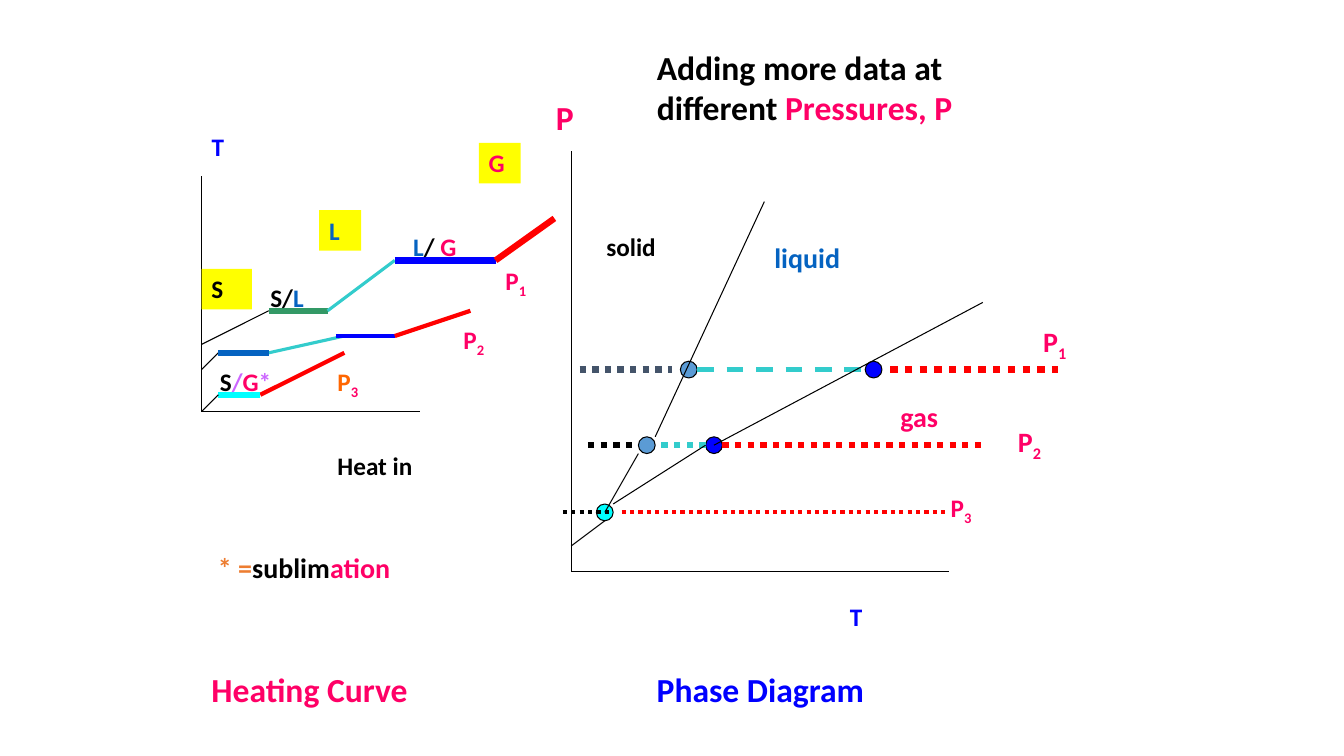
from lxml import etree
from pptx import Presentation
from pptx import util as u
from pptx.dml.color import RGBColor
from pptx.enum import dml, shapes, text
from pptx.oxml.ns import qn

COLORS = {
    "black": "000000", "blue": "0000FF", "red": "FF0000", "pink": "FF0066",
    "yellow": "FFFF00", "cyan": "00FFFF", "teal": "33CCCC", "green": "339966",
    "liquid": "0563C1", "melt": "5B9BD5", "slate": "44546A",
    "violet": "CC66FF", "orange": "FF6600", "amber": "ED7D31",
}
RGB = {name: RGBColor.from_string(value) for name, value in COLORS.items()}
DOT = dml.MSO_LINE.ROUND_DOT
DASH = dml.MSO_LINE.DASH
LINE_HEIGHT = {18: 29, 20: 31, 24: 36}

prs = Presentation()
prs.slide_width, prs.slide_height = u.Pt(960), u.Pt(540)
slide = prs.slides.add_slide(prs.slide_layouts[5])


def draw_line(x1, y1, x2, y2, color="black", width=0.75, dash=None):
    line = slide.shapes.add_connector(
        shapes.MSO_CONNECTOR.STRAIGHT, *map(u.Pt, (x1, y1, x2, y2)))
    line.line.color.rgb = RGB[color]
    line.line.width = u.Pt(width)
    if dash:
        line.line.dash_style = dash
    etree.SubElement(line._element.spPr, qn("a:effectLst"))


def write(box, size, runs):
    frame = box.text_frame
    layout = {"word_wrap": True, "auto_size": text.MSO_AUTO_SIZE.NONE,
              "vertical_anchor": text.MSO_ANCHOR.TOP,
              "margin_left": u.Pt(7.2), "margin_right": u.Pt(7.2),
              "margin_top": u.Pt(3.6), "margin_bottom": u.Pt(3.6)}
    for key, value in layout.items():
        setattr(frame, key, value)
    paragraph = frame.paragraphs[0]
    paragraph.alignment = text.PP_ALIGN.LEFT
    for words, color in runs:
        run = paragraph.add_run()
        run.text = words
        for key, value in {"name": "Calibri", "size": u.Pt(size), "bold": True}.items():
            setattr(run.font, key, value)
        run.font.color.rgb = RGB[color]
        if words.isdigit():  # pressure index as subscript
            run._r.get_or_add_rPr().set("baseline", "-25000")


# Title
title = slide.shapes.title
for key, value in {"left": 462, "top": 30, "width": 306, "height": 66}.items():
    setattr(title, key, u.Pt(value))
write(title, 24, [("Adding more data at different ", "black"), ("Pressures, P", "pink")])

# Axes of both diagrams: origin x, origin y, top, right end
for x, y, top, right in [(408, 408, 108, 678), (144, 294, 126, 300)]:
    draw_line(x, top, x, y)
    draw_line(x, y, right, y)

# Heating curves
heating_segments = [
    # P1
    (192, 222, 144, 246),
    (192, 222, 234, 222, "green", 4.5),
    (234, 222, 282, 186, "teal", 2.25),
    (282, 186, 354, 186, "blue", 4.5),
    (354, 186, 396, 156, "red", 4.5),
    # P2
    (156, 252, 144, 264),
    (192, 252, 246, 240, "teal", 2.25),
    (240, 240, 282, 240, "blue", 3),
    (282, 240, 336, 222, "red", 3),
    (192, 252, 156, 252, "liquid", 4.5),
    # P3
    (246, 252, 186, 282, "red", 3),
    (186, 282, 156, 282, "cyan", 4.5),
    (156, 282, 144, 294),
]
for segment in heating_segments:
    draw_line(*segment)

# Phase tags on yellow
phase_tags = [("S", "black", 144, 192, 36), ("L", "liquid", 228, 150, 30),
              ("G", "pink", 342, 102, 30)]
for letter, color, x, y, width in phase_tags:
    tag = slide.shapes.add_shape(shapes.MSO_SHAPE.RECTANGLE,
                                 *map(u.Pt, (x, y, width, LINE_HEIGHT[18])))
    tag.shadow.inherit = False
    tag.fill.solid()
    tag.fill.fore_color.rgb = RGB["yellow"]
    tag.line.fill.background()
    write(tag, 18, [(letter, color)])

# Transition points of the phase diagram
for x, y, color in [(486, 258, "melt"), (618, 258, "blue"), (456, 312, "melt"),
                    (504, 312, "blue"), (426, 360, "cyan")]:
    point = slide.shapes.add_shape(shapes.MSO_SHAPE.OVAL,
                                   *map(u.Pt, (x, y, 12, 12)))
    point.shadow.inherit = False
    point.fill.solid()
    point.fill.fore_color.rgb = RGB[color]
    point.line.color.rgb = RGB["black"]
    point.line.width = u.Pt(0.75)

# Constant-pressure lines: height, then the pieces along it
isobars = {
    264: [(414, 480, "slate", 4.5, DOT), (498, 618, "teal", 3, DASH),
          (636, 756, "red", 5.25, DOT)],
    318: [(420, 456, "black", 4.5, DOT), (504, 468, "teal", 4.5, DOT),
          (516, 702, "red", 4.5, DOT)],
    366: [(402, 438, "black", 3, DOT), (444, 678, "red", 3, DOT)],
}
for y, pieces in isobars.items():
    for start, end, color, width, dash in pieces:
        draw_line(start, y, end, y, color, width, dash)

# Phase boundaries
for boundary in [(438, 360, 504, 318), (510, 318, 702, 216), (432, 366, 456, 324),
                 (468, 312, 546, 144), (432, 372, 408, 390)]:
    draw_line(*boundary)

# Labels: left, top, width, text size, runs
labels = [
    # Heating curve
    (144, 90, 48, 18, [("T", "blue")]),
    (288, 162, 54, 18, [("L", "liquid"), ("/ ", "black"), ("G", "pink")]),
    (186, 198, 66, 18, [("S/", "black"), ("L", "liquid")]),
    (150, 258, 54, 18, [("S", "black"), ("/", "violet"), ("G", "pink"), ("*", "violet")]),
    (354, 186, 42, 18, [("P", "pink"), ("1", "pink")]),
    (324, 228, 42, 18, [("P", "pink"), ("2", "pink")]),
    (234, 258, 42, 18, [("P", "orange"), ("3", "pink")]),
    (234, 318, 102, 18, [("Heat in", "black")]),
    (144, 390, 174, 20, [(" * =", "amber"), ("sublim", "black"), ("ation", "pink")]),
    (144, 474, 186, 24, [("Heating Curve", "pink")]),
    # Phase diagram
    (390, 66, 48, 24, [("P", "pink")]),
    (600, 426, 48, 18, [("T", "blue")]),
    (738, 228, 54, 20, [("P", "pink"), ("1", "pink")]),
    (720, 300, 54, 20, [("P", "pink"), ("2", "pink")]),
    (672, 348, 42, 18, [("P", "pink"), ("3", "pink")]),
    (426, 162, 60, 18, [("solid", "black")]),
    (546, 168, 84, 20, [("liquid", "liquid")]),
    (636, 282, 54, 20, [("gas", "pink")]),
    (462, 474, 318, 24, [("Phase Diagram", "blue")]),
]
for x, y, width, size, runs in labels:
    label = slide.shapes.add_textbox(*map(u.Pt, (x, y, width, LINE_HEIGHT[size])))
    write(label, size, runs)

prs.save("out.pptx")
